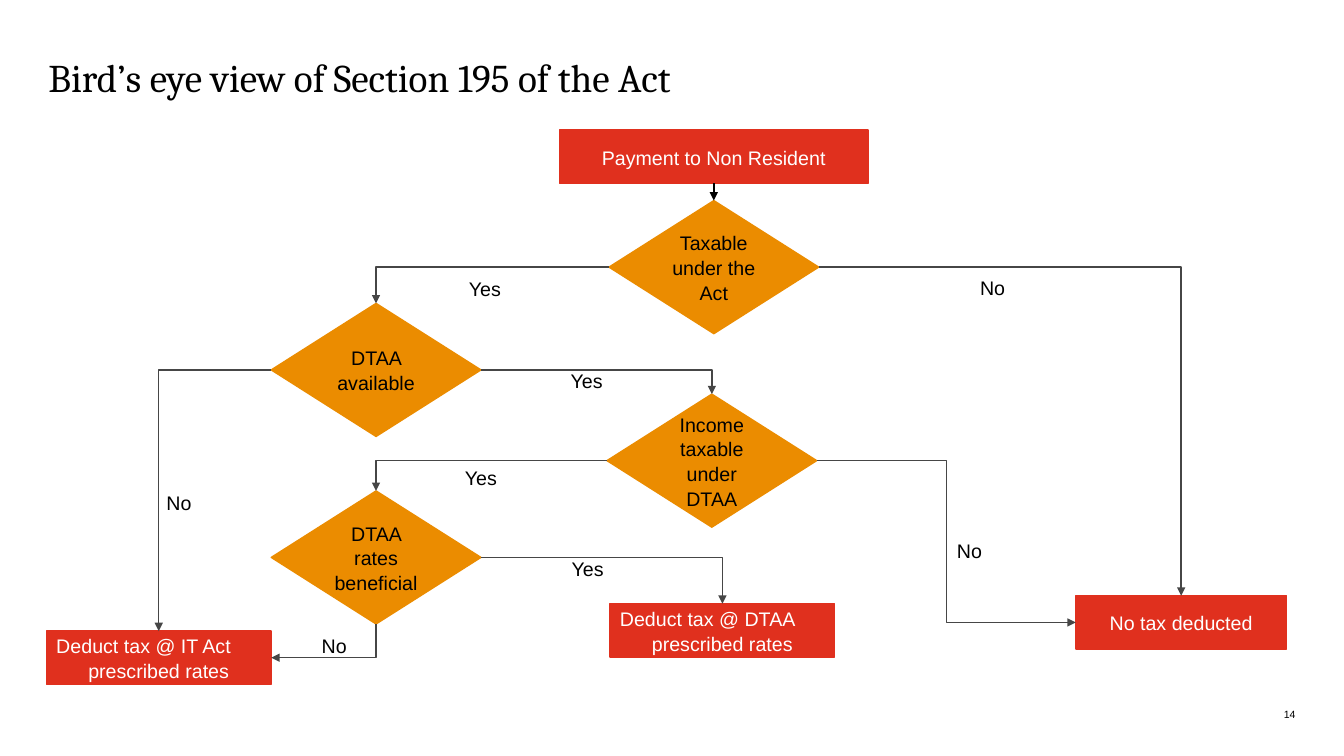
from pptx import Presentation
from pptx.dml.color import RGBColor
from pptx.enum.shapes import MSO_CONNECTOR, MSO_SHAPE
from pptx.enum.text import MSO_ANCHOR, PP_ALIGN
from pptx.oxml.ns import qn
from pptx.util import Inches, Pt
from lxml import etree

RED = RGBColor(0xE0, 0x30, 0x1E)
ORANGE = RGBColor(0xEB, 0x8C, 0x00)
GREY = RGBColor(0x46, 0x46, 0x46)
BLACK = RGBColor(0, 0, 0)
WHITE = RGBColor(255, 255, 255)
LEFT, CENTER, RIGHT = PP_ALIGN.LEFT, PP_ALIGN.CENTER, PP_ALIGN.RIGHT
TOP, MIDDLE, BOTTOM = MSO_ANCHOR.TOP, MSO_ANCHOR.MIDDLE, MSO_ANCHOR.BOTTOM
RECT, DIAMOND = MSO_SHAPE.RECTANGLE, MSO_SHAPE.DIAMOND
STRAIGHT, ELBOW = MSO_CONNECTOR.STRAIGHT, MSO_CONNECTOR.ELBOW
# Connection sites shared by rectangles and diamonds
SITE_TOP, SITE_LEFT, SITE_BOTTOM, SITE_RIGHT = range(4)

prs = Presentation()
prs.slide_width, prs.slide_height = Inches(13.33), Inches(7.5)
slide = prs.slides.add_slide(prs.slide_layouts[6])


def write(shape, text, size=14, font="Arial", color=BLACK, aligns=(LEFT,),
          anchor=MIDDLE, inset=True, spacing=1.05):
    """Fill a shape with text, one paragraph per line and per alignment."""
    frame = shape.text_frame
    frame.word_wrap = True
    frame.vertical_anchor = anchor
    if not inset:
        frame.margin_left = frame.margin_right = 0
        frame.margin_top = frame.margin_bottom = 0
    frame.text = text
    for paragraph, align in zip(frame.paragraphs, aligns):
        paragraph.alignment = align
        paragraph.line_spacing = spacing
        paragraph.font.size = Pt(size)
        paragraph.font.name = font
        paragraph.font.color.rgb = color


title = slide.shapes.add_textbox(Inches(0.48), Inches(0.53), Inches(12.36), Inches(1.87))
write(title, "Bird’s eye view of Section 195 of the Act", size=28, font="Cambria",
      anchor=TOP, inset=False, spacing=1)
page_number = slide.shapes.add_textbox(Inches(12.39), Inches(7), Inches(0.46), Inches(0.15))
write(page_number, "14", size=7.5, aligns=(RIGHT,), anchor=BOTTOM, inset=False, spacing=1)

# key: (left, top, width, text, paragraph alignments)
outcomes = {
    "payment": (5.55, 1.29, 3.06, "Payment to Non Resident", (CENTER,)),
    "no tax": (10.67, 5.91, 2.09, "No tax deducted", (CENTER,)),
    "act rates": (0.46, 6.26, 2.23, "Deduct tax @ IT Act\nprescribed rates", (LEFT, CENTER)),
    "dtaa rates": (6.05, 5.99, 2.23, "Deduct tax @ DTAA\nprescribed rates", (LEFT, CENTER)),
}
decisions = {
    "taxable": (6.04, 1.99, 2.08, "Taxable under the Act", (CENTER,)),
    "available": (2.69, 3.01, 2.08, "DTAA available", (CENTER,)),
    "income": (6.02, 3.91, 2.08, "Income taxable under DTAA", (CENTER,)),
    "beneficial": (2.69, 4.87, 2.08, "DTAA rates beneficial", (CENTER,)),
}

nodes = {}
for group, outline, height, fill, text_color in (
        (outcomes, RECT, 0.53, RED, WHITE), (decisions, DIAMOND, 1.32, ORANGE, BLACK)):
    for key, (left, top, width, text, aligns) in group.items():
        node = slide.shapes.add_shape(outline, Inches(left), Inches(top),
                                      Inches(width), Inches(height))
        node.shadow.inherit = False
        node.fill.solid()
        node.fill.fore_color.rgb = fill
        node.line.color.rgb = fill
        node.line.width = Pt(1)
        write(node, text, color=text_color, aligns=aligns)
        nodes[key] = node

# start, its site, end, its site, connector preset, end that carries the arrowhead
flows = [
    ("payment", SITE_BOTTOM, "taxable", SITE_TOP, "line", "tailEnd"),
    ("taxable", SITE_RIGHT, "no tax", SITE_TOP, "bentConnector2", "tailEnd"),
    ("taxable", SITE_LEFT, "available", SITE_TOP, "bentConnector2", "tailEnd"),
    ("available", SITE_LEFT, "act rates", SITE_TOP, "bentConnector2", "tailEnd"),
    ("available", SITE_RIGHT, "income", SITE_TOP, "bentConnector2", "tailEnd"),
    ("income", SITE_RIGHT, "no tax", SITE_LEFT, "bentConnector3", "tailEnd"),
    ("income", SITE_LEFT, "beneficial", SITE_TOP, "bentConnector2", "tailEnd"),
    ("beneficial", SITE_RIGHT, "dtaa rates", SITE_TOP, "bentConnector2", "tailEnd"),
    ("act rates", SITE_RIGHT, "beneficial", SITE_BOTTOM, "bentConnector2", "headEnd"),
]
for start, start_site, end, end_site, preset, arrow_end in flows:
    straight = preset == "line"
    flow = slide.shapes.add_connector(STRAIGHT if straight else ELBOW, 0, 0, 0, 0)
    flow.begin_connect(nodes[start], start_site)
    flow.end_connect(nodes[end], end_site)
    flow.line.color.rgb = BLACK if straight else GREY
    flow.line.width = Pt(1)
    properties = flow._element.spPr
    properties.find(qn("a:prstGeom")).set("prst", preset)
    etree.SubElement(properties.find(qn("a:ln")), qn("a:" + arrow_end), type="triangle")
    etree.SubElement(properties, qn("a:effectLst"))

answers = [
    ("No", 9.72, 2.73), ("Yes", 4.65, 2.74), ("No", 1.65, 4.86),
    ("No", 9.49, 5.34), ("Yes", 5.66, 3.65), ("Yes", 4.61, 4.61),
    ("No", 3.19, 6.28), ("Yes", 5.67, 5.52),
]
for answer, left, top in answers:
    label = slide.shapes.add_textbox(Inches(left), Inches(top), Inches(0.52), Inches(0.24))
    write(label, answer, inset=False)

prs.save("out.pptx")
